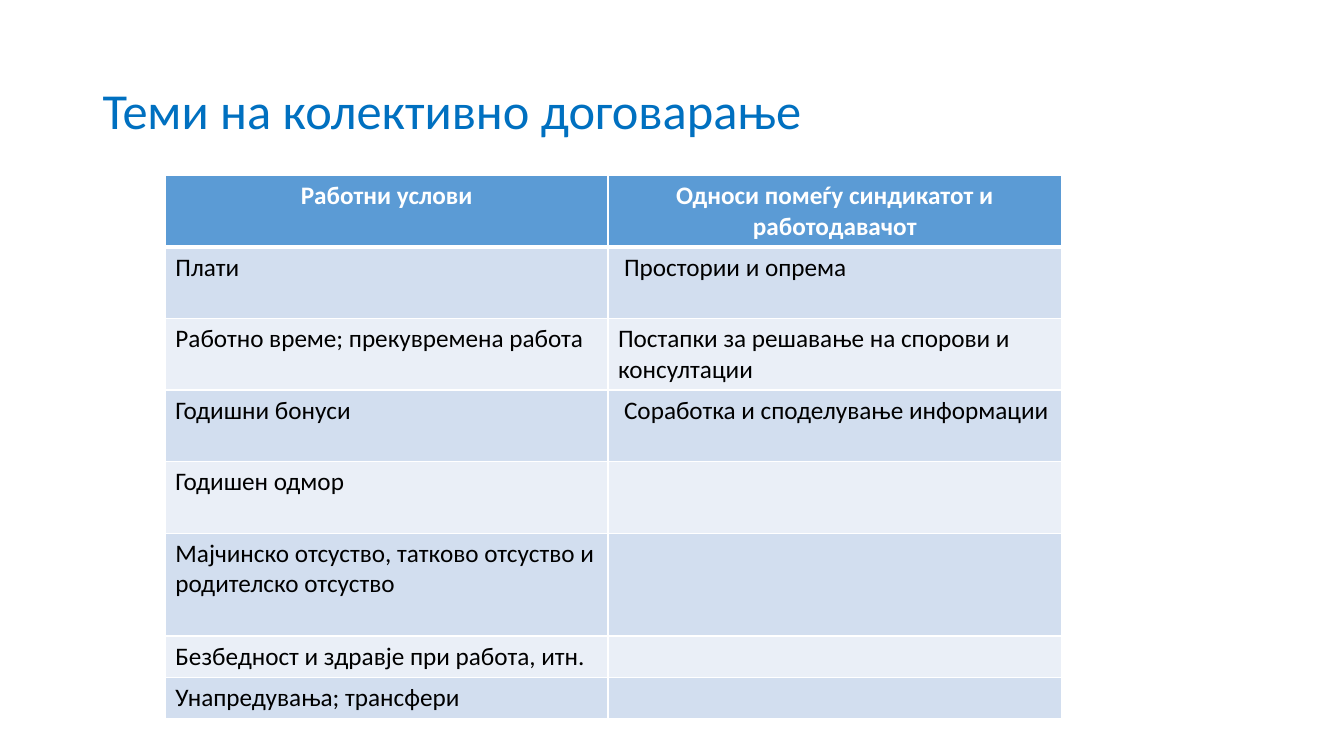
"""Build a slide with a table of collective bargaining topics."""
import pptx
import pptx.dml.color
import pptx.enum.text
import pptx.oxml.ns
import pptx.util
from lxml import etree

Inches = pptx.util.Inches
Pt = pptx.util.Pt

FONT = "Calibri"
TITLE = "Теми на колективно договарање"
TOPICS = [
    ("Работни услови", "Односи помеѓу синдикатот и работодавачот"),
    ("Плати", "Простории и опрема"),
    ("Работно време; прекувремена работа", "Постапки за решавање на спорови и консултации"),
    ("Годишни бонуси", "Соработка и споделување информации"),
    ("Годишен одмор", ""),
    ("Мајчинско отсуство, татково отсуство и родителско отсуство", ""),
    ("Безбедност и здравје при работа, итн.", ""),
    ("Унапредувања; трансфери", ""),
]
INDENTED = {"Простории и опрема", "Соработка и споделување информации"}
COLUMN_WIDTHS = [4.39, 4.5]
ROW_HEIGHTS = [0.71] * 5 + [1.02, 0.41, 0.41]
HEADER_FILL = "5B9BD5"
BAND_FILLS = ["EAEFF7", "D2DEEF"]
BORDER = "FFFFFF"


def color(value):
    return pptx.dml.color.RGBColor.from_string(value)


def write(frame, text, size=18, fill="000000", bold=False, align="LEFT", spacing=1.0):
    para = frame.paragraphs[0]
    para.alignment = getattr(pptx.enum.text.PP_ALIGN, align)
    para.line_spacing = spacing
    para.font.size = Pt(size)
    if text:
        span = para.add_run()
        span.text = text
        span.font.name = FONT
        span.font.size = Pt(size)
        span.font.bold = bold
        span.font.color.rgb = color(fill)


def add_border(cell, side, width):
    name = pptx.oxml.ns.qn
    properties = cell._tc.get_or_add_tcPr()
    line = etree.SubElement(properties, name(f"a:ln{side}"), w=str(Pt(width)))
    solid = etree.SubElement(line, name("a:solidFill"))
    etree.SubElement(solid, name("a:srgbClr"), val=BORDER)


def add_title(page):
    box = page.shapes.add_textbox(Inches(0.92), Inches(0.4), Inches(11.5), Inches(1.45))
    box.text_frame.word_wrap = True
    box.text_frame.vertical_anchor = pptx.enum.text.MSO_ANCHOR.MIDDLE
    write(box.text_frame, TITLE, size=36, fill="0070C0", spacing=0.9)


def add_topics(page):
    table = page.shapes.add_table(
        len(TOPICS), len(COLUMN_WIDTHS), Inches(1.64), Inches(1.74),
        Inches(sum(COLUMN_WIDTHS)), Inches(sum(ROW_HEIGHTS))).table
    for column, width in zip(table.columns, COLUMN_WIDTHS):
        column.width = Inches(width)
    for index, (topics, height) in enumerate(zip(TOPICS, ROW_HEIGHTS)):
        table.rows[index].height = Inches(height)
        header = index == 0
        for cell, text in zip(table.rows[index].cells, topics):
            for side in "LRTB":
                thick = (header and side == "B") or (index == 1 and side == "T")
                add_border(cell, side, 3 if thick else 1)
            cell.fill.solid()
            cell.fill.fore_color.rgb = color(HEADER_FILL if header else BAND_FILLS[index % 2])
            if text in INDENTED:
                cell.margin_left = Inches(0.16)
                cell.margin_right = Inches(0.05)
            write(cell.text_frame, text, bold=header,
                  fill="FFFFFF" if header else "000000",
                  align="CENTER" if header else "LEFT")


def main():
    deck = pptx.Presentation()
    deck.slide_width = Inches(13.33)
    deck.slide_height = Inches(7.5)
    page = deck.slides.add_slide(deck.slide_layouts[6])
    add_title(page)
    add_topics(page)
    deck.save("out.pptx")


if __name__ == "__main__":
    main()
